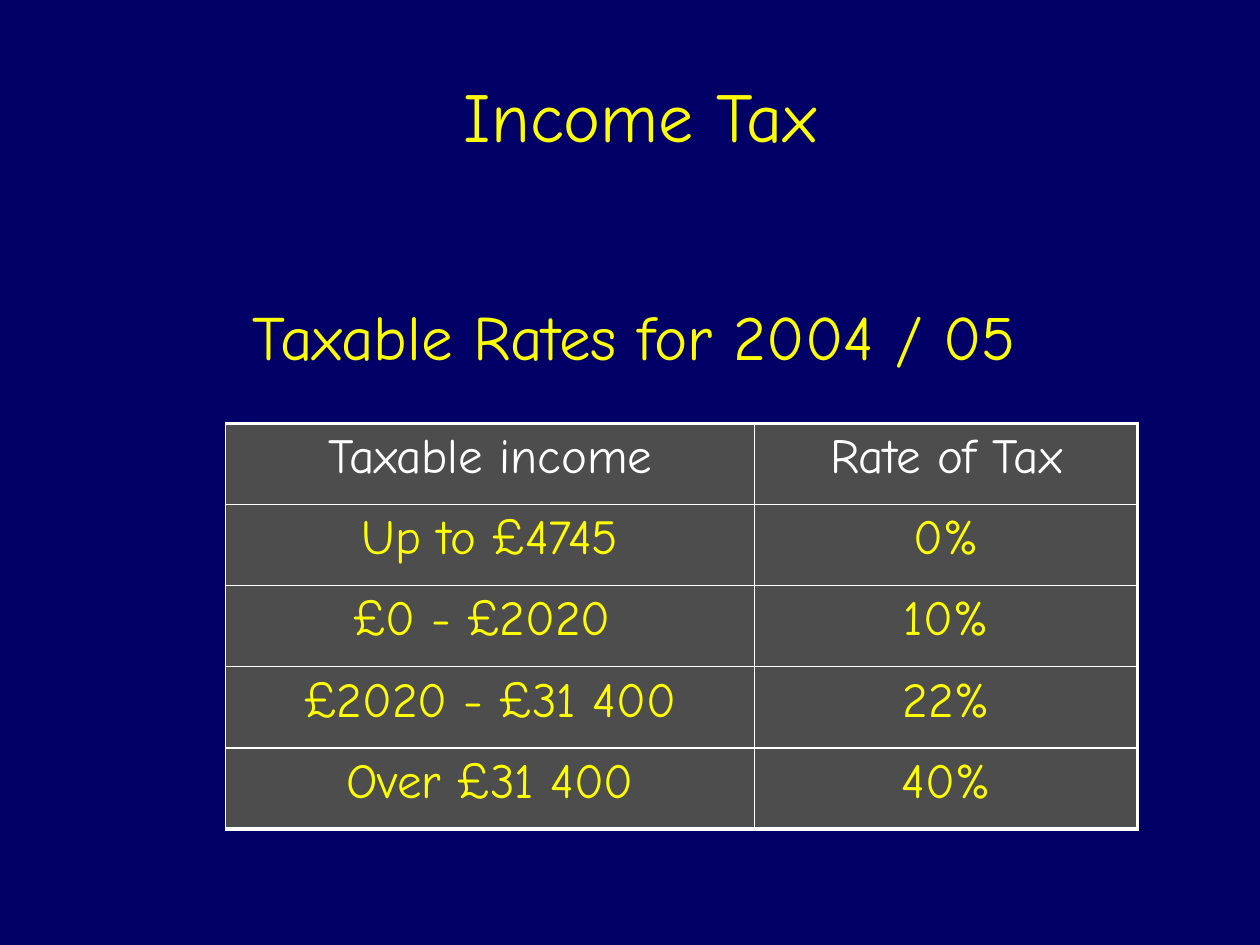
from lxml.etree import SubElement
from pptx import Presentation
from pptx.dml.color import RGBColor
from pptx.enum.text import MSO_ANCHOR, PP_ALIGN
from pptx.oxml.ns import qn
from pptx.util import Inches, Pt

FONT = "Comic Neue"
COLORS = {"background": "000066", "cell": "4D4D4D", "white": "FFFFFF", "yellow": "FFFF00"}
TAX_RATES = [
    ("Taxable income", "Rate of Tax"),
    ("Up to £4745", "0%"),
    ("£0 - £2020 ", "10%"),
    ("£2020 - £31 400", "22%"),
    ("Over £31 400", "40%"),
]
COLUMN_SHARES = (0.58, 0.42)
THIN, THICK = Pt(1), Pt(2.25)


def rgb(name):
    return RGBColor.from_string(COLORS[name])


def write(text_frame, text, size, color, alignment):
    """Put one formatted line of text into a text frame."""
    text_frame.text = text
    paragraph = text_frame.paragraphs[0]
    paragraph.alignment = alignment
    font = paragraph.runs[0].font
    font.name, font.size, font.color.rgb = FONT, Pt(size), rgb(color)


def add_title(slide, left, top, width, height):
    title = slide.shapes.title
    title.left, title.top, title.width, title.height = left, top, width, height
    title.text_frame.vertical_anchor = MSO_ANCHOR.MIDDLE
    write(title.text_frame, "Income Tax", 40, "yellow", PP_ALIGN.CENTER)


def add_subtitle(slide, left, top, width, height):
    text_frame = slide.shapes.add_textbox(left, top, width, height).text_frame
    text_frame.word_wrap = True
    write(text_frame, "Taxable Rates for 2004 / 05", 36, "yellow", PP_ALIGN.LEFT)


def add_borders(cell, widths):
    """Draw the cell's borders; widths maps a side (L, R, T, B) to a line width."""
    properties = cell._tc.get_or_add_tcPr()
    for side, width in widths.items():
        line = SubElement(properties, qn(f"a:ln{side}"), w=str(width))
        fill = SubElement(line, qn("a:solidFill"))
        SubElement(fill, qn("a:srgbClr"), val=COLORS["white"])


def add_rates_table(slide, left, top, width, height):
    last_row, last_column = len(TAX_RATES) - 1, len(COLUMN_SHARES) - 1
    frame = slide.shapes.add_table(last_row + 1, last_column + 1, left, top, width, height)
    table = frame.table
    for column, share in zip(table.columns, COLUMN_SHARES):
        column.width = int(width * share)
    for row, texts in enumerate(TAX_RATES):
        for column, text in enumerate(texts):
            cell = table.cell(row, column)
            add_borders(cell, {
                "L": THIN,
                "R": THICK if column == last_column else THIN,
                "T": THICK if row == 0 else THIN,
                "B": THICK if row == last_row else THIN,
            })
            cell.fill.solid()
            cell.fill.fore_color.rgb = rgb("cell")
            color = "white" if row == 0 else "yellow"
            write(cell.text_frame, text, 28, color, PP_ALIGN.CENTER)


def main():
    presentation = Presentation()
    presentation.slide_width, presentation.slide_height = Inches(10), Inches(7.5)
    slide = presentation.slides.add_slide(presentation.slide_layouts[5])
    slide.background.fill.solid()
    slide.background.fill.fore_color.rgb = rgb("background")
    add_rates_table(slide, Inches(1.79), Inches(3.36), Inches(7.24), Inches(3.22))
    add_title(slide, Inches(1.14), Inches(0.28), Inches(7.88), Inches(1.25))
    add_subtitle(slide, Inches(1.91), Inches(2.31), Inches(7.04), Inches(0.71))
    presentation.save("out.pptx")


if __name__ == "__main__":
    main()
